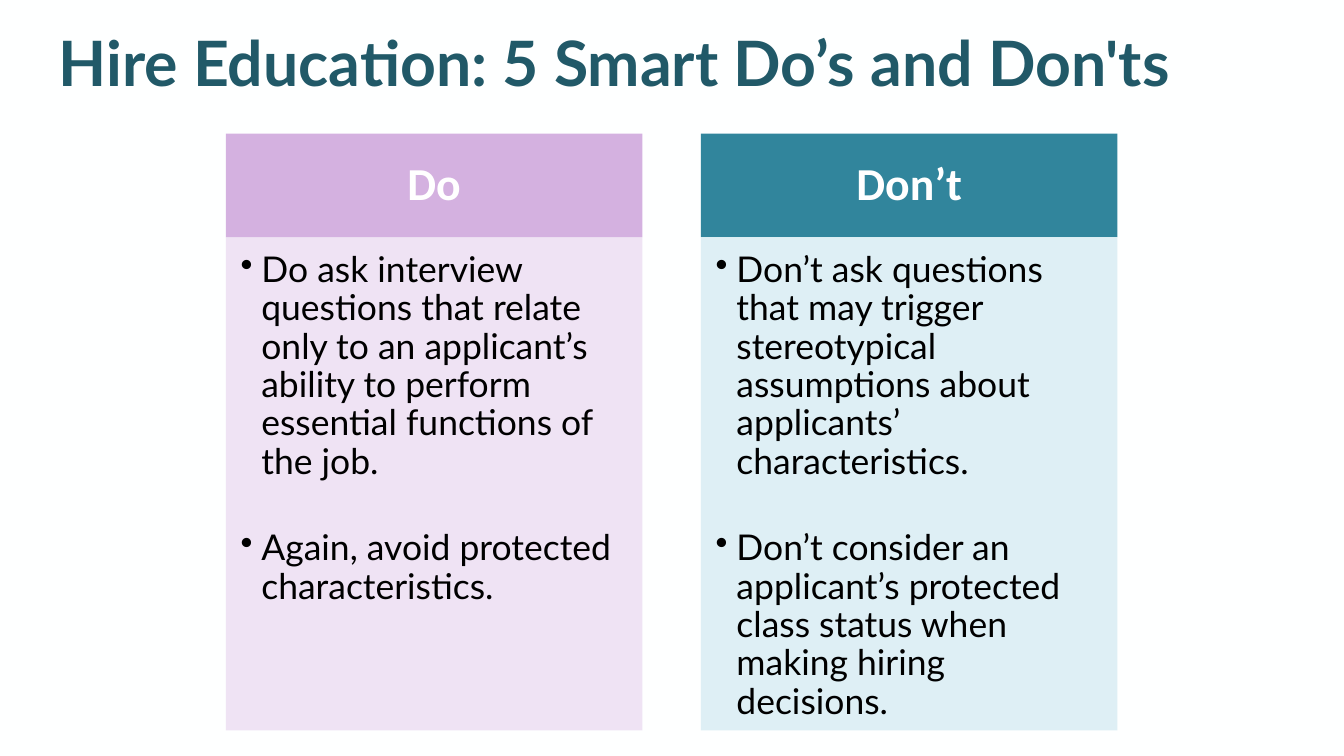
"""Build the slide of hiring do's and don'ts."""
from lxml import etree
from pptx import Presentation
from pptx import util as u
from pptx.dml.color import RGBColor
from pptx.enum import shapes, text
from pptx.oxml.ns import qn

PX = 9144
BACKGROUND = RGBColor(0xFE, 0xFF, 0xFF)
WHITE = RGBColor(0xFF, 0xFF, 0xFF)
BLACK = RGBColor(0x00, 0x00, 0x00)
NAVY = RGBColor(0x21, 0x59, 0x68)
LILAC = RGBColor(0xD4, 0xB1, 0xE0)
TEAL = RGBColor(0x31, 0x85, 0x9C)
PALE_BLUE = RGBColor(0xDB, 0xEE, 0xF4)

COLUMN_LEFT, COLUMN_STEP, COLUMN_WIDTH = 336, 707, 620
HEADER_TOP, HEADER_HEIGHT, BODY_HEIGHT = 199, 154, 734
BULLET_INDENT = 31

COLUMNS = [
    ("Do", LILAC, LILAC, 35, [
        "Do ask interview questions that relate only to an applicant’s "
        "ability to perform essential functions of the job.",
        "Again, avoid protected characteristics.",
    ]),
    ("Don’t", TEAL, PALE_BLUE, 90, [
        "Don’t ask questions that may trigger stereotypical assumptions "
        "about applicants’ characteristics.",
        "Don’t consider an applicant’s protected class status when making "
        "hiring decisions.",
    ]),
]


def px(*lengths):
    return [u.Emu(length * PX) for length in lengths]


def add_bullet(paragraph):
    properties = paragraph._p.get_or_add_pPr()
    indent = BULLET_INDENT * PX
    properties.set("marL", str(indent))
    properties.set("indent", str(-indent))
    etree.SubElement(properties, qn("a:buChar")).set("char", "•")


def write(frame, lines, *, size, color, font="Lato", bold=False,
          align=text.PP_ALIGN.LEFT, anchor=text.MSO_ANCHOR.TOP,
          insets=(0, 0, 0, 0), spacing=0.9, gap=0, bullets=False):
    frame.word_wrap = True
    frame.vertical_anchor = anchor
    (frame.margin_left, frame.margin_top,
     frame.margin_right, frame.margin_bottom) = px(*insets)
    for index, line in enumerate(lines):
        paragraph = frame.add_paragraph() if index else frame.paragraphs[0]
        if bullets:
            paragraph.level = 1
            add_bullet(paragraph)
        paragraph.alignment = align
        paragraph.line_spacing = spacing
        if index:
            paragraph.space_before = u.Pt(gap)
        run = paragraph.add_run()
        run.text = line
        run.font.name = font
        run.font.size = u.Pt(size)
        run.font.bold = bold
        run.font.color.rgb = color


def add_panel(slide, left, top, height, fill, opacity=100):
    panel = slide.shapes.add_shape(
        shapes.MSO_SHAPE.RECTANGLE, *px(left, top, COLUMN_WIDTH, height))
    panel.shadow.inherit = False
    panel.line.fill.background()
    panel.fill.solid()
    panel.fill.fore_color.rgb = fill
    if opacity < 100:
        color = panel._element.spPr.find(".//" + qn("a:srgbClr"))
        etree.SubElement(color, qn("a:alpha")).set("val", str(opacity * 1000))
    return panel.text_frame


def add_column(slide, left, heading, header_fill, body_fill, opacity, points):
    header = add_panel(slide, left, HEADER_TOP, HEADER_HEIGHT, header_fill)
    write(header, [heading], size=49, color=WHITE, font="Calibri", bold=True,
          align=text.PP_ALIGN.CENTER, anchor=text.MSO_ANCHOR.MIDDLE,
          insets=(38, 22, 38, 22))
    body = add_panel(slide, left, HEADER_TOP + HEADER_HEIGHT, BODY_HEIGHT,
                     body_fill, opacity)
    write(body, points, size=38, color=BLACK, insets=(22, 22, 30, 33),
          gap=52, bullets=True)


def add_title(slide, title):
    box = slide.shapes.add_textbox(*px(87, 42, 1707, 107))
    write(box.text_frame, [title], size=67, color=NAVY, bold=True,
          spacing=u.Pt(76.4))


def main():
    deck = Presentation()
    deck.slide_width, deck.slide_height = px(2000, 1125)
    slide = deck.slides.add_slide(deck.slide_layouts[6])
    slide.background.fill.solid()
    slide.background.fill.fore_color.rgb = BACKGROUND
    add_title(slide, "Hire Education: 5 Smart Do’s and Don'ts")
    for index, column in enumerate(COLUMNS):
        add_column(slide, COLUMN_LEFT + index * COLUMN_STEP, *column)
    deck.save("out.pptx")


if __name__ == "__main__":
    main()
